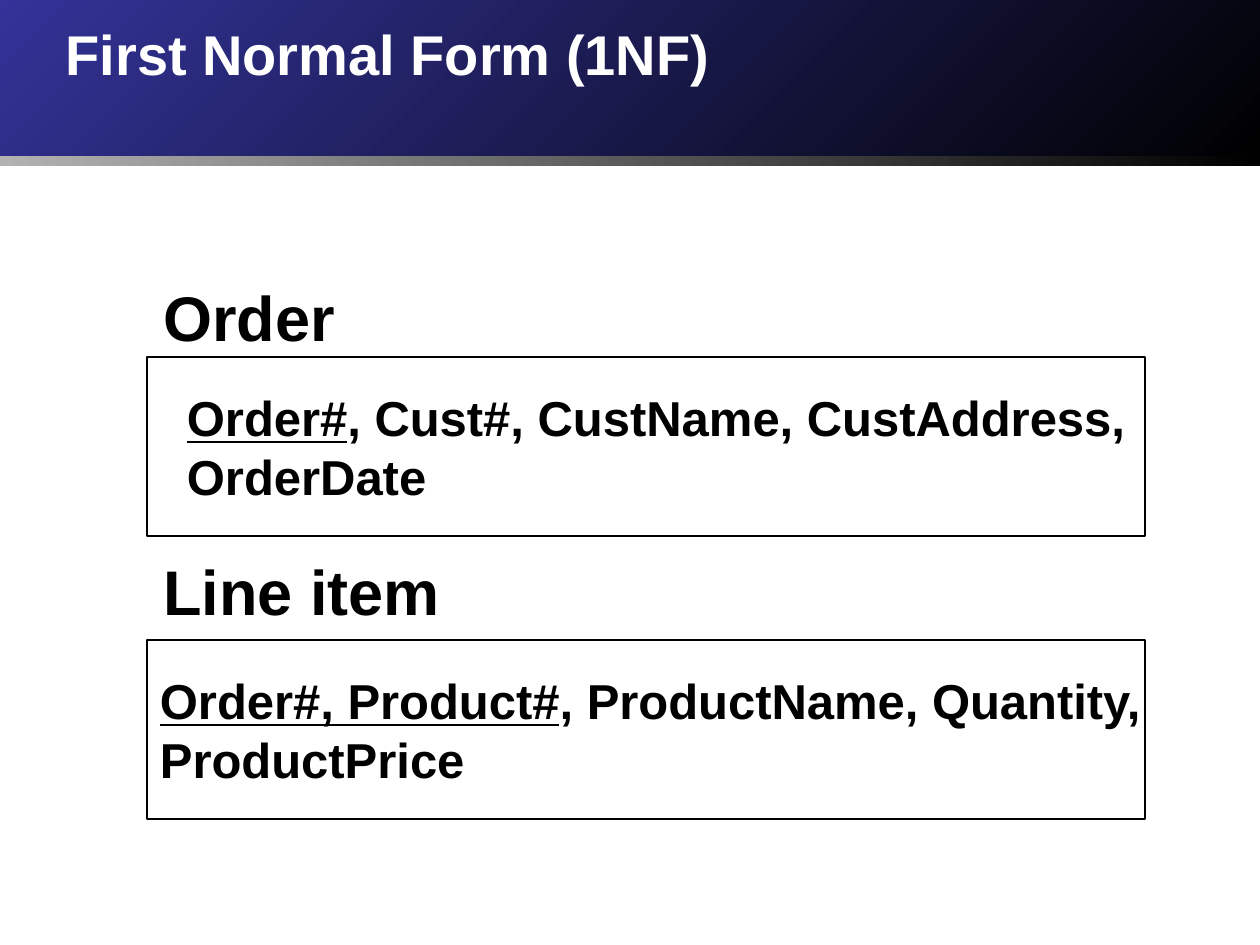
from lxml import etree
from pptx import Presentation
from pptx.dml.color import RGBColor
from pptx.enum.shapes import MSO_SHAPE
from pptx.enum.text import MSO_ANCHOR, PP_ALIGN
from pptx.oxml.ns import qn
from pptx.util import Pt

RECTANGLE = MSO_SHAPE.RECTANGLE
TOP, MIDDLE = MSO_ANCHOR.TOP, MSO_ANCHOR.MIDDLE
LEFT = PP_ALIGN.LEFT

PX = 914400 / 126
COLORS = {
    "paper": "FFFFFF",
    "ink": "000000",
    "banner": "333399",
    "stripe": "B2B2B2",
}


def px(length):
    return round(length * PX)


class SlideWriter:
    font = "Arial"
    inset = 13

    def __init__(self, slide):
        self.slide = slide

    def color(self, name):
        return RGBColor.from_string(COLORS[name])

    def place(self, shape, *bounds):
        shape.left, shape.top, shape.width, shape.height = map(px, bounds)

    def style(self, paragraph, size, color):
        paragraph.alignment = LEFT
        font = paragraph.font
        font.name, font.size, font.bold = self.font, Pt(size), True
        font.color.rgb = self.color(color)

    def rectangle(self, *bounds):
        shape = self.slide.shapes.add_shape(RECTANGLE, *map(px, bounds))
        shape.shadow.inherit = False
        return shape

    def band(self, bounds, start, angle):
        band = self.rectangle(*bounds)
        band.line.fill.background()
        band.fill.gradient()
        band.fill.gradient_angle = angle
        for stop, name in zip(band.fill.gradient_stops, (start, "ink")):
            stop.color.rgb = self.color(name)

    def title(self, text, *bounds):
        title = self.slide.shapes.title
        self.place(title, *bounds)
        title.element.getparent().append(title.element)
        frame = title.text_frame
        frame.text = text
        frame.vertical_anchor = TOP
        paragraph = frame.paragraphs[0]
        self.style(paragraph, 32, "paper")
        properties = paragraph.runs[0].font._element
        effects = etree.SubElement(properties, qn("a:effectLst"))
        shadow = etree.SubElement(effects, qn("a:outerShdw"), dist="38100", dir="2700000")
        etree.SubElement(shadow, qn("a:srgbClr"), val=COLORS["ink"])

    def heading(self, text, *bounds):
        frame = self.slide.shapes.add_textbox(*map(px, bounds)).text_frame
        frame.word_wrap = False
        frame.text = text
        self.style(frame.paragraphs[0], 36, "ink")

    def relation(self, bounds, key, first_line, second_line, indent):
        box = self.rectangle(*bounds)
        box.fill.solid()
        box.fill.fore_color.rgb = self.color("paper")
        box.line.color.rgb = self.color("ink")
        box.line.width = Pt(0.75)
        frame = box.text_frame
        frame.word_wrap = True
        frame.vertical_anchor = MIDDLE
        frame.margin_left, frame.margin_right = px(self.inset + indent), 0
        attributes = frame.paragraphs[0]
        key_run = attributes.add_run()
        key_run.text = key
        key_run.font.underline = True
        attributes.add_run().text = first_line
        frame.add_paragraph().text = second_line
        for paragraph in frame.paragraphs:
            self.style(paragraph, 28, "ink")


def main():
    deck = Presentation()
    deck.slide_width, deck.slide_height = px(1260), px(945)
    writer = SlideWriter(deck.slides.add_slide(deck.slide_layouts[5]))

    writer.band((0, 0, 1260, 166), "banner", 315)
    writer.band((0, 156, 1260, 10), "stripe", 0)
    writer.heading("Order", 151, 272, 197, 88)
    writer.heading("Line item", 151, 546, 302, 88)
    writer.relation((147, 357, 998, 179), "Order#",
                    ", Cust#, CustName, CustAddress,", "OrderDate", 27)
    writer.relation((147, 640, 998, 179), "Order#, Product#",
                    ", ProductName, Quantity,", "ProductPrice", 0)
    writer.title("First Normal Form (1NF)", 53, 13, 1144, 126)

    deck.save("out.pptx")


if __name__ == "__main__":
    main()
